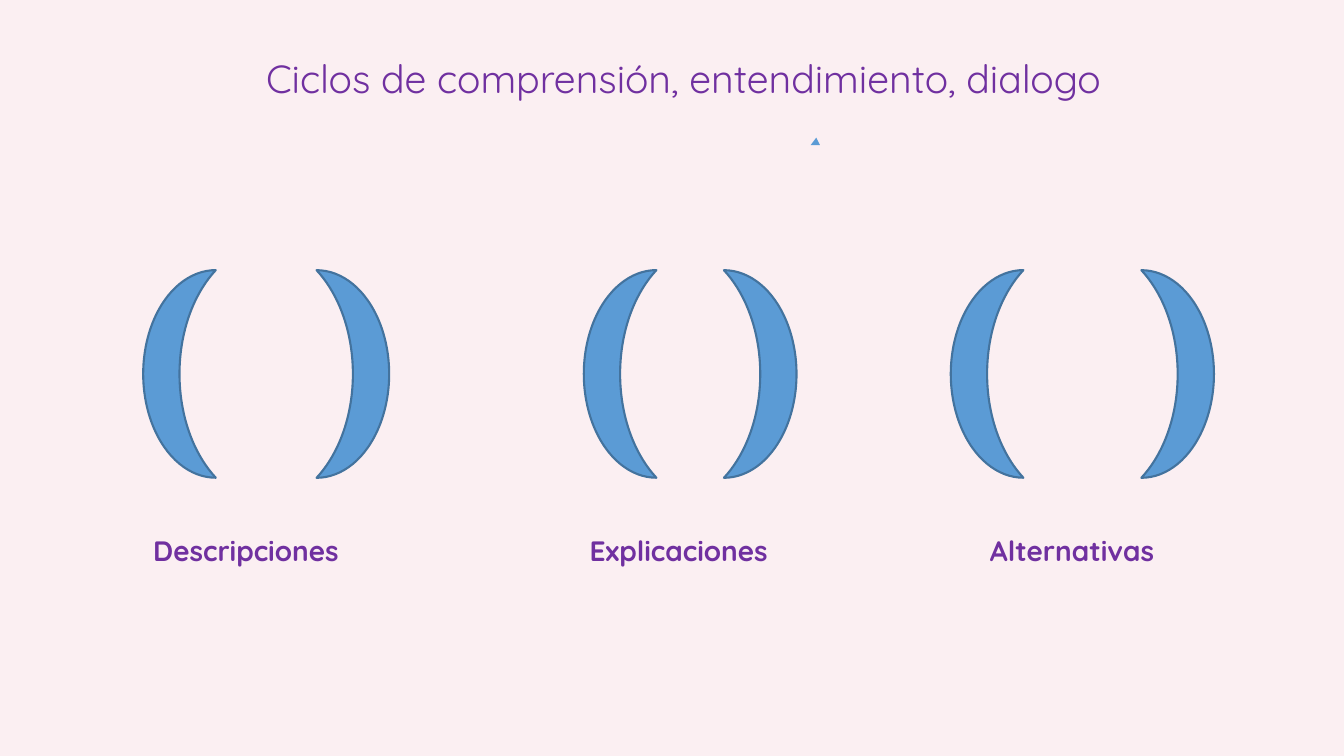
from pptx import Presentation
from pptx.dml.color import RGBColor
from pptx.enum.shapes import MSO_CONNECTOR, MSO_SHAPE
from pptx.enum.text import MSO_AUTO_SIZE
from pptx.oxml.ns import qn
from pptx.util import Inches, Pt
from lxml.etree import SubElement

FONT = "Quicksand"
BACKGROUND, PURPLE, BLUE, DARK_BLUE = "FBEFF2", "7030A0", "5B9BD5", "43739E"
MOON_WIDTH, MOON_HEIGHT = 0.72, 2.06
CYCLE_TOP, LABEL_DROP = 2.68, 2.56

# Label, left edge, width across both moons, label offset
CYCLES = [
    ("Descripciones", 1.42, 2.44, 0),
    ("Explicaciones", 5.79, 2.11, -0.04),
    ("Alternativas", 9.43, 2.61, 0.29),
]


def color(hex_string):
    return RGBColor.from_string(hex_string)


def add_text(page, text, left, top, width, height, size, bold=False, wrap=True):
    box = page.shapes.add_textbox(
        Inches(left), Inches(top), Inches(width), Inches(height))
    frame = box.text_frame
    frame.word_wrap = wrap
    frame.auto_size = MSO_AUTO_SIZE.SHAPE_TO_FIT_TEXT
    para = frame.paragraphs[0]
    para.text = text
    para.font.name = FONT
    para.font.size = Pt(size)
    para.font.bold = bold
    para.font.color.rgb = color(PURPLE)


def add_moon(page, left, top, rotation):
    moon = page.shapes.add_shape(
        MSO_SHAPE.MOON, Inches(left), Inches(top),
        Inches(MOON_WIDTH), Inches(MOON_HEIGHT))
    moon.rotation = rotation
    moon.shadow.inherit = False
    moon.fill.solid()
    moon.fill.fore_color.rgb = color(BLUE)
    moon.line.color.rgb = color(DARK_BLUE)
    moon.line.width = Pt(1.5)


def add_cycle(page, label, left, top, width, label_offset):
    """Two facing moons with a label below."""
    add_moon(page, left, top, 0)
    add_moon(page, left + width - MOON_WIDTH, top, 180)
    add_text(page, label, left + label_offset, top + LABEL_DROP,
             2.6, 0.44, 20, bold=True)


def add_arrow(page, start_x, start_y, end_x, end_y):
    arrow = page.shapes.add_connector(
        MSO_CONNECTOR.STRAIGHT, Inches(start_x), Inches(start_y),
        Inches(end_x), Inches(end_y))
    arrow.line.color.rgb = color(BLUE)
    arrow.line.width = Pt(0.75)
    # Arrowhead, and no shadow
    SubElement(arrow.line._get_or_add_ln(), qn("a:tailEnd"), type="triangle")
    SubElement(arrow._element.spPr, qn("a:effectLst"))


def main():
    deck = Presentation()
    deck.slide_width, deck.slide_height = Inches(13.33), Inches(7.5)
    page = deck.slides.add_slide(deck.slide_layouts[6])
    page.background.fill.solid()
    page.background.fill.fore_color.rgb = color(BACKGROUND)

    add_arrow(page, 8.08, 1.42, 8.04, 1.44)
    for label, left, width, label_offset in CYCLES:
        add_cycle(page, label, left, CYCLE_TOP, width, label_offset)
    add_text(page, "Ciclos de comprensión, entendimiento, dialogo",
             2.54, 0.49, 9.29, 0.57, 28, wrap=False)

    deck.save("out.pptx")


if __name__ == "__main__":
    main()
